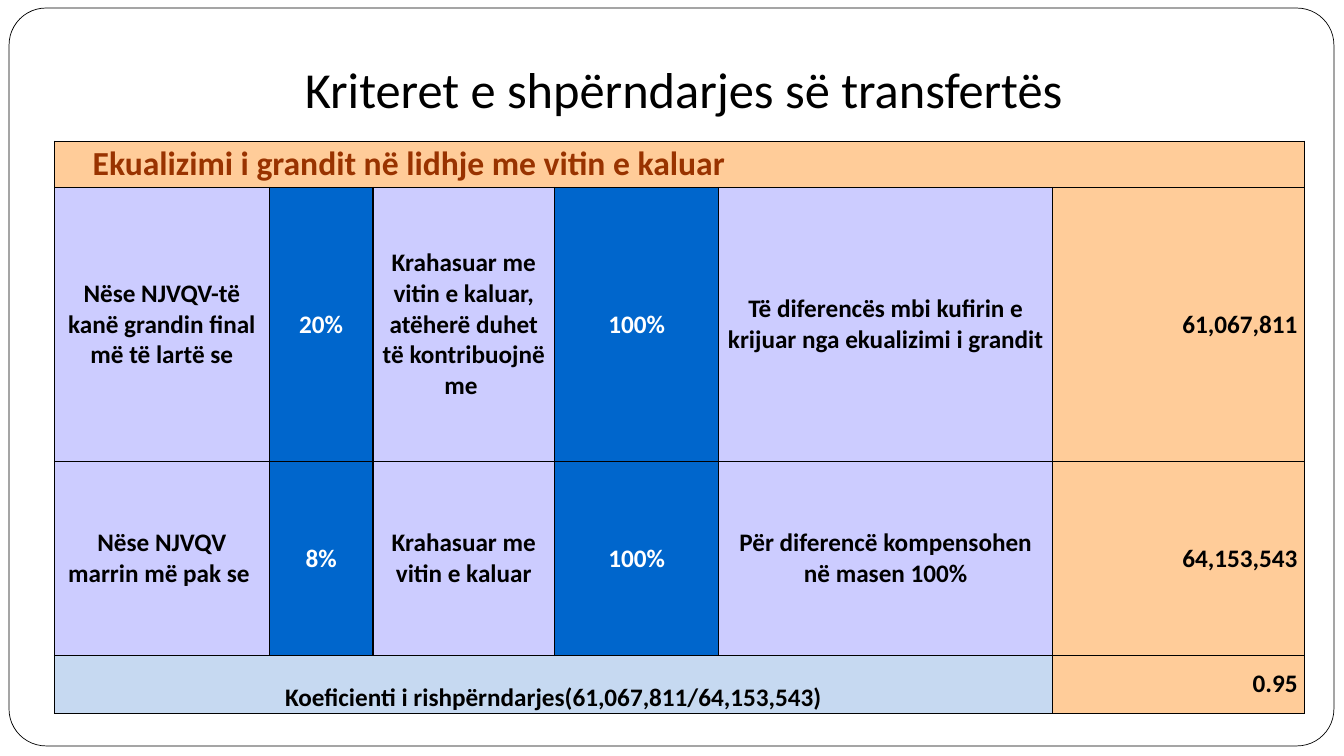
from dataclasses import dataclass

from lxml.etree import SubElement
from pptx import Presentation
from pptx.dml.color import RGBColor
from pptx.enum.shapes import MSO_SHAPE
from pptx.enum.text import MSO_ANCHOR as ANCHOR, PP_ALIGN as ALIGN
from pptx.oxml.ns import qn
from pptx.util import Inches, Pt


@dataclass(frozen=True)
class Theme:
    font: str = "Calibri"
    title_size: int = 36
    heading_size: int = 24
    body_size: int = 18
    black: str = "000000"
    white: str = "FFFFFF"
    brown: str = "993300"
    orange: str = "FFCC99"
    lilac: str = "CCCCFF"
    blue: str = "0066CC"
    pale_blue: str = "C6D9F1"


T = Theme()

COL_WIDTHS = [2.13, 1.03, 1.8, 1.63, 3.31, 2.5]
ROW_HEIGHTS = [0.46, 2.72, 1.92, 0.58]
HEADING = "Ekualizimi i grandit në lidhje me vitin e kaluar"
CRITERIA = [
    ["Nëse NJVQV-të kanë grandin final më të lartë se", "20%",
     "Krahasuar me vitin e kaluar, atëherë duhet të kontribuojnë me ", "100%",
     "Të diferencës mbi kufirin e krijuar nga ekualizimi i grandit", "61,067,811"],
    ["Nëse NJVQV marrin më pak se ", "8%",
     "Krahasuar me vitin e kaluar", "100%",
     "Për diferencë kompensohen në masen 100%", "64,153,543"],
]
COEFFICIENT = ["Koeficienti i rishpërndarjes(61,067,811/64,153,543)", "0.95"]


def rgb(value):
    return RGBColor.from_string(value)


def write(tf, text, size, color, align, bold=False, indent=0):
    p = tf.paragraphs[0]
    p.text = text
    p.alignment = align
    font = p.font
    font.name, font.size, font.bold = T.font, Pt(size), bold
    font.color.rgb = rgb(color)
    if indent:
        p._p.get_or_add_pPr().set("indent", str(Inches(indent)))


def add_frame(s):
    sp = s.shapes.add_shape(MSO_SHAPE.ROUNDED_RECTANGLE, Inches(0.09), Inches(0.08),
                            Inches(13.14), Inches(7.32))
    sp.adjustments[0] = 0.05
    sp.shadow.inherit = False
    sp.fill.solid()
    sp.fill.fore_color.rgb = rgb(T.white)
    sp.line.color.rgb = rgb(T.black)
    sp.line.width = Pt(0.5)


def add_title(s, text):
    tf = s.shapes.add_textbox(Inches(2.02), Inches(0.25), Inches(9.64), Inches(1.03)).text_frame
    tf.word_wrap = True
    tf.vertical_anchor = ANCHOR.BOTTOM
    tf.margin_bottom = Inches(0.1)
    write(tf, text, T.title_size, T.black, ALIGN.CENTER)


def add_borders(cell):
    tc_pr = cell._tc.get_or_add_tcPr()
    for side in ("a:lnL", "a:lnR", "a:lnT", "a:lnB"):
        ln = SubElement(tc_pr, qn(side), w=str(Pt(1)))
        SubElement(SubElement(ln, qn("a:solidFill")), qn("a:srgbClr"), val=T.black)


def add_grid(s):
    shape = s.shapes.add_table(len(ROW_HEIGHTS), len(COL_WIDTHS), Inches(0.54), Inches(1.4),
                               Inches(sum(COL_WIDTHS)), Inches(sum(ROW_HEIGHTS)))
    table = shape.table
    table.first_row = table.horz_banding = False
    for column, width in zip(table.columns, COL_WIDTHS):
        column.width = Inches(width)
    for row, height in zip(table.rows, ROW_HEIGHTS):
        row.height = Inches(height)
    for cell in table.iter_cells():
        add_borders(cell)
        cell.margin_left = cell.margin_right = Inches(0.07)
        cell.margin_top = cell.margin_bottom = 0
    return table


def fill_cell(cell, text, fill, color=T.black, size=T.body_size, align=ALIGN.CENTER,
              indent=0, anchor=ANCHOR.MIDDLE):
    cell.fill.solid()
    cell.fill.fore_color.rgb = rgb(fill)
    cell.vertical_anchor = anchor
    write(cell.text_frame, text, size, color, align, True, indent)


def fill_amount(cell, text):
    fill_cell(cell, text, T.orange, align=ALIGN.RIGHT, indent=0.15)


def add_criteria_table(s):
    table = add_grid(s)

    # Heading across all columns
    table.cell(0, 0).merge(table.cell(0, 5))
    fill_cell(table.cell(0, 0), HEADING, T.orange, T.brown, T.heading_size, ALIGN.LEFT, 0.31)

    # Conditions alternate with percentages; the amount comes last
    for r, texts in enumerate(CRITERIA, 1):
        for c, text in enumerate(texts[:-1]):
            fill, color = (T.blue, T.white) if c % 2 else (T.lilac, T.black)
            fill_cell(table.cell(r, c), text, fill, color)
        fill_amount(table.cell(r, 5), texts[-1])

    # Coefficient row
    label, value = COEFFICIENT
    table.cell(3, 0).merge(table.cell(3, 4))
    fill_cell(table.cell(3, 0), label, T.pale_blue, anchor=ANCHOR.BOTTOM)
    fill_amount(table.cell(3, 5), value)


def main():
    prs = Presentation()
    prs.slide_width, prs.slide_height = Inches(13.33), Inches(7.5)
    s = prs.slides.add_slide(prs.slide_layouts[6])
    add_frame(s)
    add_title(s, "Kriteret e shpërndarjes së transfertës ")
    add_criteria_table(s)
    prs.save("out.pptx")


if __name__ == "__main__":
    main()
